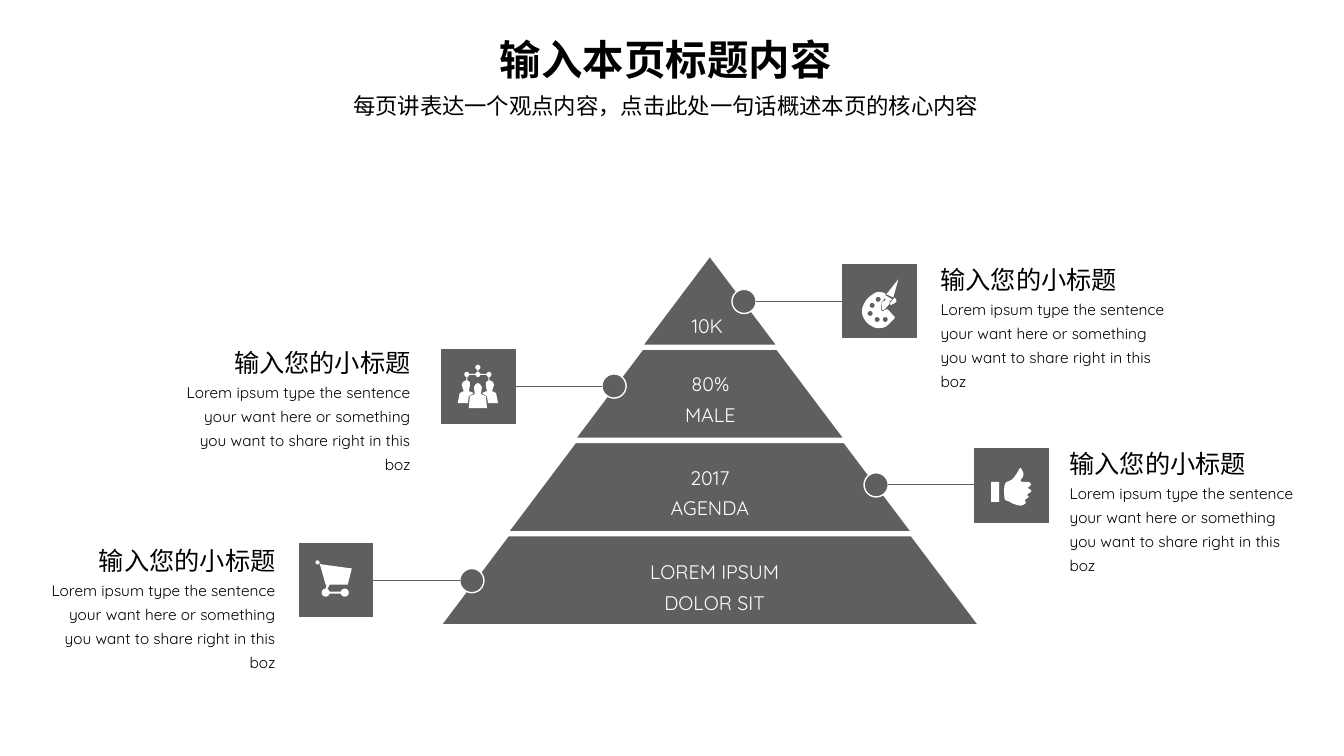
import math
from dataclasses import dataclass

from lxml import etree
from pptx import Presentation
from pptx import util as u
from pptx.dml.color import RGBColor
from pptx.enum import shapes, text
from pptx.oxml.ns import qn

Point = tuple[float, float]
Contour = list[Point]
COLOURS = {"grey": "5F5F5F", "white": "FFFFFF", "black": "000000"}
FONT = "Quicksand"
APEX_X, APEX_Y = 7.04, 2.54
TIER_PITCH, TIER_HEIGHT, HALF_STEP = 0.925, 0.885, 0.6665
TILE, DOT, LINK = 0.73, 0.24, 0.86
HEADING = "输入您的小标题"
BODY = "Lorem ipsum type the sentence your want here or something you want to share right in this boz"
BODY_SPACING = {"line_spacing": 1.3, "space_after": u.Pt(3)}


@dataclass
class Line:
    content: str
    size: float
    spacing: dict
    bold: bool = False


@dataclass
class TierLabel:
    content: str
    left: float
    top: float
    width: float
    height: float


@dataclass
class Callout:
    dot_left: float
    centre_y: float
    tile_top: float
    text_left: float
    text_top: float
    side: int
    icon: str

    @property
    def tile_left(self) -> float:
        return self.dot_left + (DOT + LINK if self.side > 0 else -LINK - TILE)


@dataclass
class Bar:
    left: float
    top: float
    width: float
    height: float


def smoothed(points: Contour) -> Contour:
    for _ in range(2):
        pairs = zip(points, points[1:] + points[:1])
        points = [(a[0] * (1 - t) + b[0] * t, a[1] * (1 - t) + b[1] * t) for a, b in pairs for t in (0.2, 0.8)]
    return points


def disc(x: float, y: float, radius: float) -> Contour:
    angles = [math.tau * step / 16 for step in range(16)]
    return [(x + radius * math.cos(angle), y + radius * math.sin(angle)) for angle in angles]


def strip(left: float, top: float, right: float, bottom: float) -> Contour:
    return [(left, top), (right, top), (right, bottom), (left, bottom)]


def mirrored(points: Contour) -> Contour:
    return [(0.72 - x, y) for x, y in reversed(points)]


SIDE_PERSON = [(0.16, 0.53), (0.18, 0.43), (0.22, 0.41), (0.2, 0.35), (0.21, 0.32), (0.25, 0.3),
               (0.28, 0.32), (0.28, 0.36), (0.27, 0.41), (0.32, 0.43), (0.27, 0.46), (0.26, 0.53)]
HALF_LEADER = [(0.27, 0.58), (0.28, 0.46), (0.33, 0.44), (0.32, 0.37), (0.34, 0.34), (0.36, 0.33)]
LABELS = [
    TierLabel("10K", 6.61, 3, 0.81, 0.38),
    TierLabel("80% MALE", 6.64, 3.57, 0.81, 0.69),
    TierLabel("2017 AGENDA", 6.44, 4.5, 1.2, 0.69),
    TierLabel("LOREM IPSUM DOLOR SIT", 6.26, 5.44, 1.66, 0.69),
]
CALLOUTS = [
    Callout(7.26, 2.99, 2.62, 9.23, 2.57, 1, "palette"),
    Callout(8.57, 4.81, 4.45, 10.51, 4.4, 1, "thumb"),
    Callout(5.97, 3.83, 3.47, 1.62, 3.4, -1, "team"),
    Callout(4.56, 5.76, 5.39, 0.28, 5.36, -1, "cart"),
]
ICONS = {
    "cart": [[
        [(0.2, 0.2), (0.22, 0.21), (0.52, 0.25), (0.48, 0.41), (0.3, 0.41),
         (0.28, 0.45), (0.26, 0.45), (0.27, 0.41), (0.26, 0.41), (0.21, 0.23)],
        strip(0.3, 0.48, 0.41, 0.5),
        disc(0.18, 0.19, 0.02), disc(0.26, 0.49, 0.04), disc(0.45, 0.49, 0.04),
    ]],
    "palette": [
        [smoothed([(0.43, 0.29), (0.34, 0.27), (0.24, 0.34), (0.19, 0.43), (0.19, 0.51), (0.24, 0.59),
                   (0.33, 0.64), (0.42, 0.63), (0.49, 0.56), (0.52, 0.53), (0.49, 0.5), (0.44, 0.44),
                   (0.38, 0.48), (0.38, 0.38), (0.41, 0.35)]),
         *[disc(x, y, 0.025) for x, y in [
             (0.27, 0.49), (0.29, 0.41), (0.34, 0.55), (0.35, 0.35), (0.42, 0.55)]]],
        [smoothed([(0.51, 0.33), (0.5, 0.35), (0.47, 0.38), (0.47, 0.41), (0.53, 0.38), (0.53, 0.35)])],
        [smoothed([(0.44, 0.35), (0.38, 0.38), (0.39, 0.47), (0.45, 0.41), (0.47, 0.38)])],
        [[(0.55, 0.15), (0.43, 0.3), (0.5, 0.33)]],
        [[(0.42, 0.31), (0.49, 0.35), (0.46, 0.37), (0.42, 0.35)]],
    ],
    "thumb": [
        [smoothed([(0.29, 0.34), (0.37, 0.31), (0.42, 0.24), (0.45, 0.18), (0.49, 0.26), (0.44, 0.33),
                   (0.54, 0.33), (0.56, 0.36), (0.52, 0.39), (0.57, 0.42), (0.51, 0.46), (0.54, 0.48),
                   (0.49, 0.51), (0.51, 0.54), (0.46, 0.57), (0.38, 0.55), (0.33, 0.52), (0.29, 0.51)])],
        Bar(0.16, 0.33, 0.08, 0.2),
    ],
    "team": [[
        SIDE_PERSON, mirrored(SIDE_PERSON), HALF_LEADER + mirrored(HALF_LEADER),
        *[disc(x, y, 0.025) for x, y in [(0.25, 0.245), (0.36, 0.175), (0.36, 0.245), (0.47, 0.245)]],
        strip(0.275, 0.24, 0.335, 0.25), strip(0.385, 0.24, 0.445, 0.25), strip(0.355, 0.2, 0.365, 0.22),
        *[strip(x, 0.27, x + 0.01, 0.3) for x in (0.245, 0.465)],
    ]],
}


def rgb(name: str) -> RGBColor:
    return RGBColor.from_string(COLOURS[name])


def paint(shape, fill: str, line: str = "", width: float = 1) -> None:
    shape.shadow.inherit = False
    shape.fill.solid()
    shape.fill.fore_color.rgb = rgb(fill)
    if line:
        shape.line.color.rgb = rgb(line)
        shape.line.width = u.Pt(width)
    else:
        shape.line.fill.background()


def add_preset(slide, kind, box: tuple, fill: str, line: str = "", width: float = 1) -> None:
    shape = slide.shapes.add_shape(kind, *map(u.Inches, box))
    paint(shape, fill, line, width)


def add_outline(slide, contours: list[Contour], fill: str, line: str = "", left: float = 0, top: float = 0) -> None:
    rings = [[(u.Inches(left + x), u.Inches(top + y)) for x, y in contour] for contour in contours]
    builder = slide.shapes.build_freeform(*rings[0][0])
    for index, ring in enumerate(rings):
        if index:
            builder.move_to(*ring[0])
        builder.add_line_segments(ring[1:], close=True)
    paint(builder.convert_to_shape(), fill, line)


def write(shape, lines: list[Line], align, colour: str) -> None:
    frame = shape.text_frame
    frame.word_wrap = True
    for index, line in enumerate(lines):
        paragraph = frame.add_paragraph() if index else frame.paragraphs[0]
        paragraph.alignment = align
        for name, value in line.spacing.items():
            setattr(paragraph, name, value)
        run = paragraph.add_run()
        run.text = line.content
        for name, value in {"name": FONT, "size": u.Pt(line.size), "bold": line.bold}.items():
            setattr(run.font, name, value)
        run.font.color.rgb = rgb(colour)


def add_text(slide, box: tuple, lines: list[Line], align, colour: str) -> None:
    shape = slide.shapes.add_textbox(*map(u.Inches, box))
    write(shape, lines, align, colour)
    shape.text_frame.auto_size = text.MSO_AUTO_SIZE.SHAPE_TO_FIT_TEXT


def add_title(slide) -> None:
    title = slide.shapes.title
    for name, value in {"left": 0.83, "top": 0.2, "width": 11.55, "height": 0.65}.items():
        setattr(title, name, u.Inches(value))
    write(title, [Line("输入本页标题内容", 29.6, {"line_spacing": u.Pt(42)}, True)], text.PP_ALIGN.CENTER, "black")
    title.text_frame.auto_size = text.MSO_AUTO_SIZE.NONE
    title.text_frame.vertical_anchor = text.MSO_ANCHOR.TOP
    subtitle = Line("每页讲表达一个观点内容，点击此处一句话概述本页的核心内容", 16,
                    {"line_spacing": 0.9, "space_before": u.Pt(10)})
    add_text(slide, (0.83, 0.89, 11.55, 0.39), [subtitle], text.PP_ALIGN.CENTER, "black")


def add_tier(slide, index: int, label: TierLabel) -> None:
    top = APEX_Y + index * TIER_PITCH
    bottom = top + TIER_HEIGHT
    upper, lower = index * HALF_STEP, (index + 1) * HALF_STEP
    add_outline(slide, [[(APEX_X - lower, bottom), (APEX_X - upper, top),
                         (APEX_X + upper, top), (APEX_X + lower, bottom)]], "grey", "white")
    add_text(slide, (label.left, label.top, label.width, label.height),
             [Line(label.content, 14, BODY_SPACING)], text.PP_ALIGN.CENTER, "white")


def add_icon(slide, left: float, top: float, parts: list) -> None:
    for part in parts:
        if isinstance(part, Bar):
            box = (left + part.left, top + part.top, part.width, part.height)
            add_preset(slide, shapes.MSO_SHAPE.RECTANGLE, box, "white")
        else:
            add_outline(slide, part, "white", left=left, top=top)


def add_callout(slide, callout: Callout) -> None:
    start = callout.dot_left + (DOT if callout.side > 0 else 0)
    y = callout.centre_y
    add_preset(slide, shapes.MSO_SHAPE.OVAL, (callout.dot_left, y - DOT / 2, DOT, DOT), "grey", "white")
    ends = map(u.Inches, (start, y, start + callout.side * LINK, y))
    connector = slide.shapes.add_connector(shapes.MSO_CONNECTOR.STRAIGHT, *ends)
    connector.line.color.rgb = rgb("grey")
    connector.line.width = u.Pt(0.75)
    etree.SubElement(connector._element.spPr, qn("a:effectLst"))
    left, top = callout.tile_left, callout.tile_top
    add_preset(slide, shapes.MSO_SHAPE.RECTANGLE, (left, top, TILE, TILE), "grey", "grey", 0.75)
    add_icon(slide, left, top, ICONS[callout.icon])
    align = text.PP_ALIGN.LEFT if callout.side > 0 else text.PP_ALIGN.RIGHT
    add_text(slide, (callout.text_left, callout.text_top, 2.55, 1.11),
             [Line(HEADING, 18, {}), Line(BODY, 11, BODY_SPACING)], align, "black")


def main() -> None:
    presentation = Presentation()
    presentation.slide_width, presentation.slide_height = u.Inches(13.33), u.Inches(7.5)
    slide = presentation.slides.add_slide(presentation.slide_layouts[5])
    add_title(slide)
    for index, label in enumerate(LABELS):
        add_tier(slide, index, label)
    for callout in CALLOUTS:
        add_callout(slide, callout)
    presentation.save("out.pptx")


if __name__ == "__main__":
    main()
